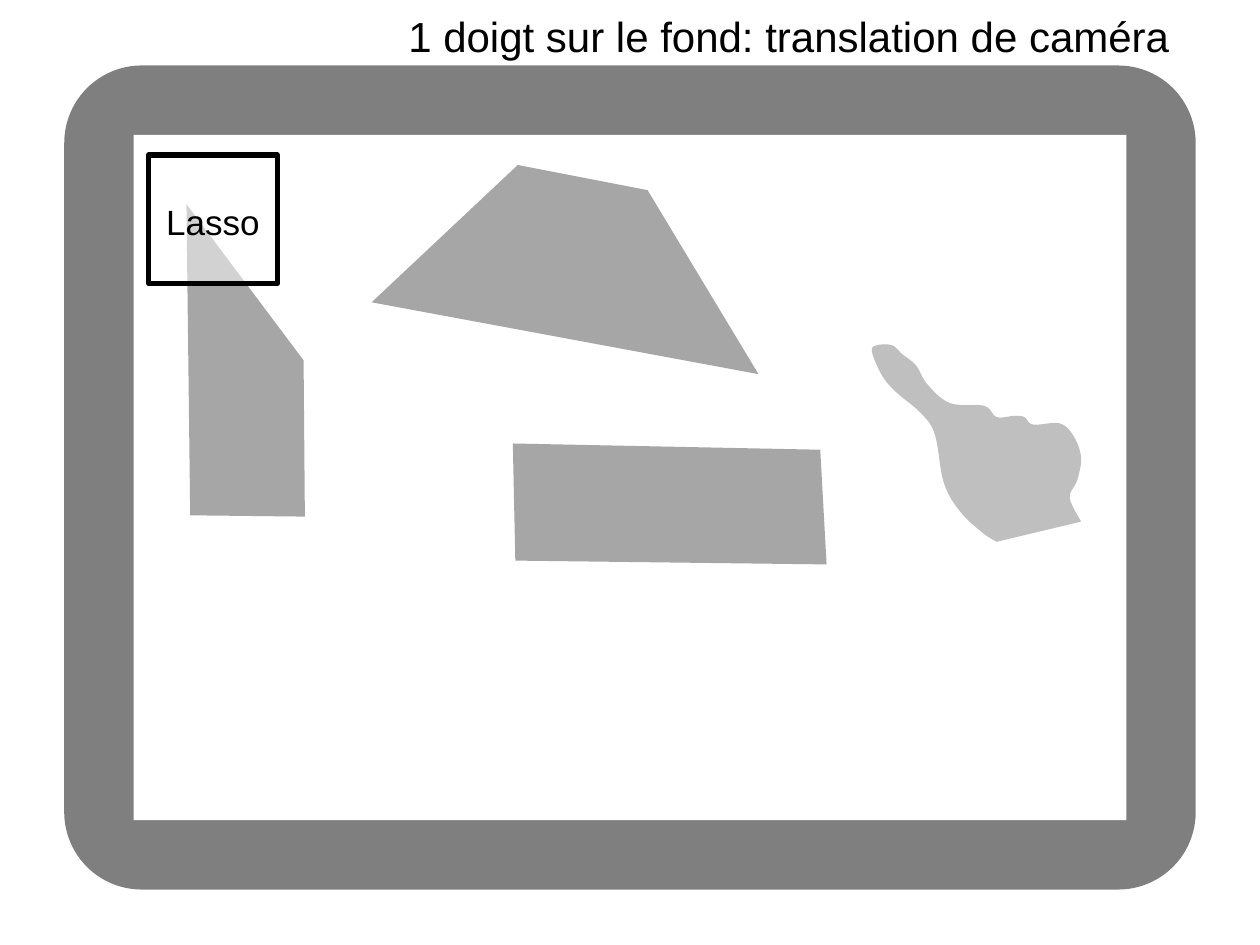
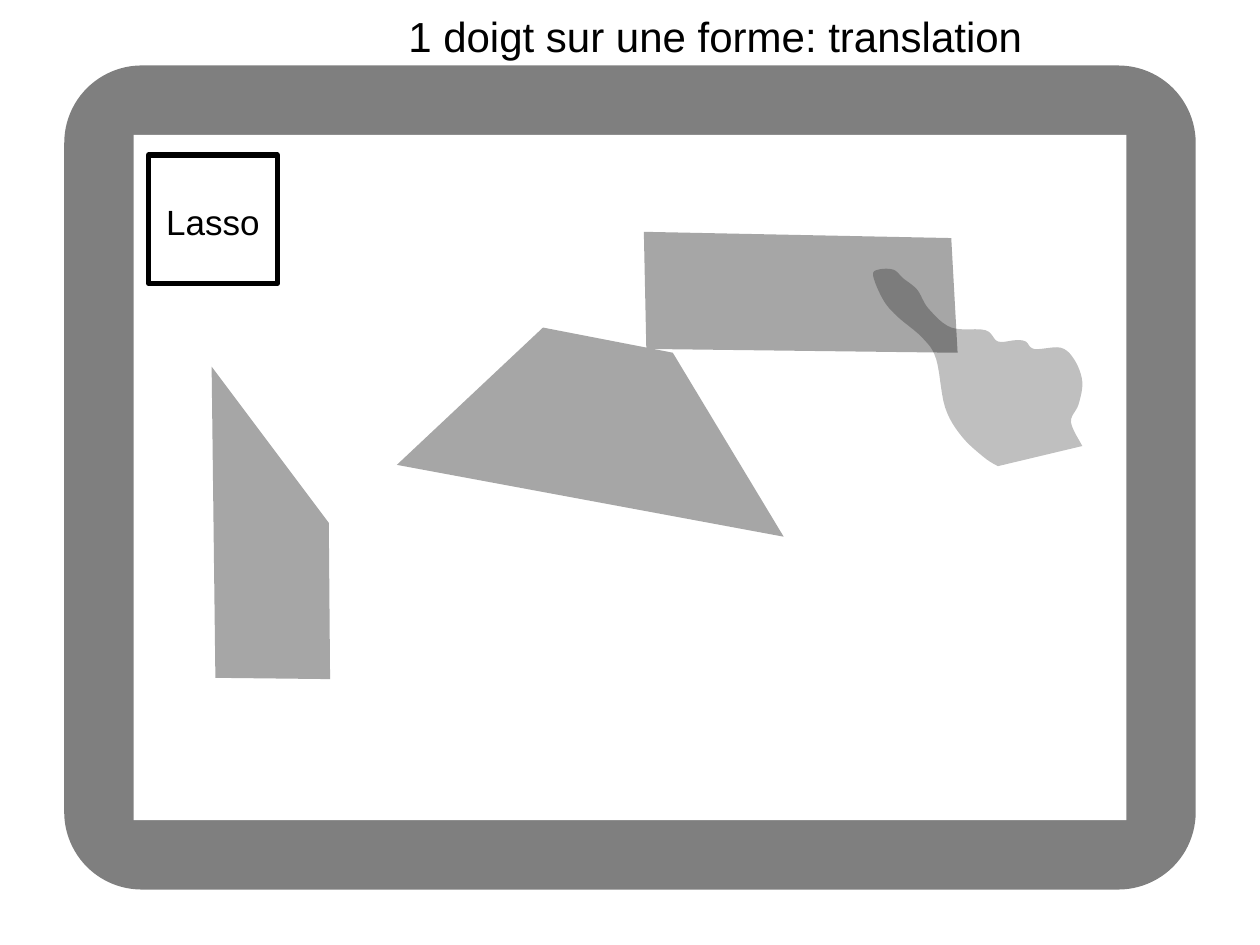
from lxml import etree
from pptx import Presentation
from pptx import util as u
from pptx.dml import color
from pptx.enum import shapes, text
from pptx.oxml import ns

BLACK, WHITE, GREY = "000000", "FFFFFF", "A6A6A6"
FONT = "Arial"

# Shared boxes: left, top, width, height in inches
TITLE = (3.14, 0.03, 6.3, 0.51)
TABLET = (0.51, 0.52, 8.98, 6.54)
BUTTON = (1.18, 1.23, 1.02, 1.02)
RIM = 0.55

# Each form: its start on the screen, and its corners measured from there
FORMS = {
    "tower": ((1.48, 1.62), [(0.03, 2.47), (0, 0), (0.93, 1.24), (0.94, 2.48)]),
    "kite": ((2.95, 1.31), [(0, 1.09), (3.07, 1.66), (2.19, 0.2), (1.16, 0)]),
    "block": ((4.07, 3.52), [(0, 0), (0.02, 0.93), (2.49, 0.96), (2.44, 0.05)]),
}

# The hand: a few key points for each part, joined by a smooth curve
HAND_SPOT = (6.92, 2.73)
HAND = {
    "palm": [(0.99, 1.57), (0.88, 1.5), (0.7, 1.33), (0.57, 1.1), (0.5, 0.72)],
    "finger below": [(0.39, 0.55), (0.19, 0.38), (0.08, 0.25)],
    "finger tip": [(0, 0.06), (0.04, 0.01), (0.16, 0.01)],
    "finger above": [(0.24, 0.08), (0.35, 0.17), (0.44, 0.32), (0.62, 0.47)],
    "knuckles": [(0.89, 0.49), (0.99, 0.58), (1.13, 0.57), (1.21, 0.58),
                 (1.28, 0.64), (1.49, 0.63)],
    "side": [(1.6, 0.73), (1.66, 0.9), (1.63, 1.08), (1.57, 1.22), (1.66, 1.41)],
}

# Each slide: title, button opacity, and how far each part has moved
PAN = (0.2, 1.29)
SCENES = [
    ("1 doigt sur le fond: translation de caméra", 50, {}),
    ("1 doigt sur une forme: translation", 100,
     {"tower": PAN, "kite": PAN, "block": (1.04, -1.68), "hand": (0.01, -0.6)}),
]


def shade(tint):
    return color.RGBColor.from_string(tint)


def shift(spot, move):
    return spot[0] + move[0], spot[1] + move[1]


def smooth(keys, steps=6):
    """Return points on a Catmull-Rom curve through the key points."""
    ends = [keys[0], *keys, keys[-1]]
    curve = [keys[0]]
    for before, start, end, after in zip(ends, ends[1:], ends[2:], ends[3:]):
        for step in range(1, steps + 1):
            t = step / steps
            curve.append(tuple(
                b + (c - a) * t / 2
                + (2 * a - 5 * b + 4 * c - d) * t ** 2 / 2
                + (3 * b - a - 3 * c + d) * t ** 3 / 2
                for a, b, c, d in zip(before, start, end, after)))
    return curve


def paint(part, tint, alpha=100):
    """Fill a part, without line or shadow."""
    part.shadow.inherit = False
    part.line.fill.background()
    part.fill.solid()
    part.fill.fore_color.rgb = shade(tint)
    if alpha < 100:
        node = part.element.spPr.find(".//" + ns.qn("a:srgbClr"))
        etree.SubElement(node, ns.qn("a:alpha"), val=str(alpha * 1000))


def panel(slide, kind, box, tint, alpha=100):
    part = slide.shapes.add_shape(kind, *map(u.Inches, box))
    paint(part, tint, alpha)
    return part


def outline(slide, points, spot, tint, alpha=100):
    """Draw a closed form whose points are measured from spot."""
    dots = [tuple(map(u.Inches, shift(spot, point))) for point in points]
    pen = slide.shapes.build_freeform(*dots[0])
    pen.add_line_segments(dots[1:], close=True)
    paint(pen.convert_to_shape(), tint, alpha)


def write(part, words, size, align):
    frame = part.text_frame
    frame.word_wrap = True
    frame.auto_size = text.MSO_AUTO_SIZE.NONE
    frame.vertical_anchor = text.MSO_ANCHOR.TOP
    para = frame.paragraphs[0]
    para.alignment = align
    run = para.add_run()
    run.text = words
    run.font.name = FONT
    run.font.size = u.Pt(size)
    run.font.color.rgb = shade(BLACK)


def head(slide, box, words):
    """Move the title placeholder and fill it."""
    title = slide.shapes.title
    title.left, title.top, title.width, title.height = map(u.Inches, box)
    write(title, words, 24, text.PP_ALIGN.LEFT)


def tablet(slide, box):
    """Draw the device: a rounded rim around a white screen."""
    left, top, width, height = box
    body = panel(slide, shapes.MSO_SHAPE.ROUNDED_RECTANGLE, box, BLACK, 50)
    body.adjustments[0] = 0.094
    screen = (left + RIM, top + RIM, width - 2 * RIM, height - 2 * RIM)
    panel(slide, shapes.MSO_SHAPE.RECTANGLE, screen, WHITE)


def button(slide, box, alpha):
    """Draw the lasso button and its label."""
    left, top, width, _ = box
    frame = panel(slide, shapes.MSO_SHAPE.RECTANGLE, box, WHITE, alpha)
    frame.line.color.rgb = shade(BLACK)
    frame.line.width = u.Pt(3)
    area = (left + 0.04, top + 0.31, width - 0.08, 0.44)
    label = slide.shapes.add_textbox(*map(u.Inches, area))
    write(label, "Lasso", 20, text.PP_ALIGN.CENTER)


def hand(slide, spot):
    """Draw the see-through hand, part after part."""
    keys = [key for part in HAND.values() for key in part]
    outline(slide, smooth(keys), spot, BLACK, 25)


def scene(deck, words, alpha, moves):
    """Build one gesture slide, from back to front."""
    slide = deck.slides.add_slide(deck.slide_layouts[5])
    head(slide, TITLE, words)
    tablet(slide, TABLET)
    for name, (spot, corners) in FORMS.items():
        outline(slide, corners, shift(spot, moves.get(name, (0, 0))), GREY)
    button(slide, BUTTON, alpha)
    hand(slide, shift(HAND_SPOT, moves.get("hand", (0, 0))))


def main():
    deck = Presentation()
    deck.slide_width, deck.slide_height = u.Inches(10), u.Inches(7.5)
    for words, alpha, moves in SCENES:
        scene(deck, words, alpha, moves)
    deck.save("out.pptx")


if __name__ == "__main__":
    main()
